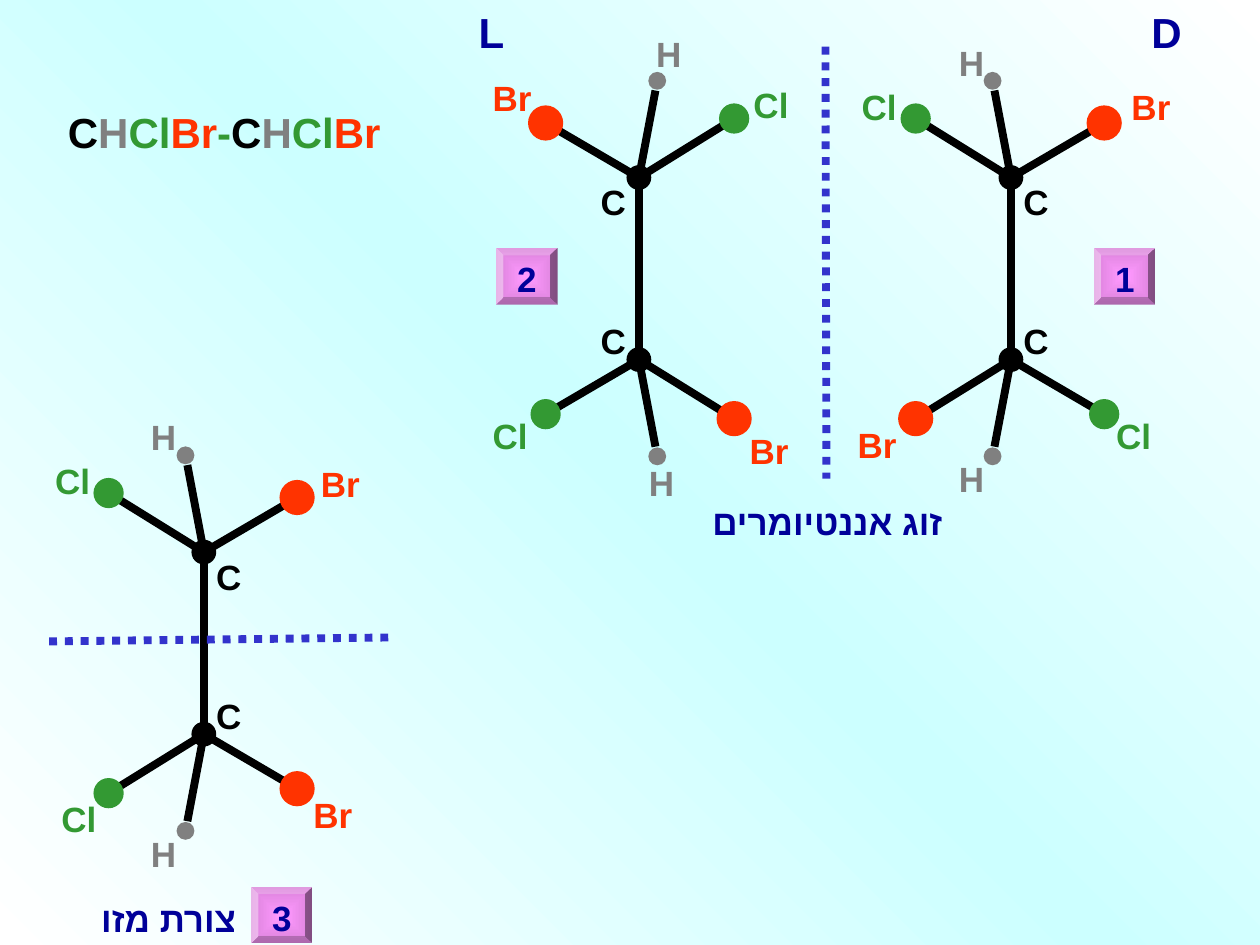
from dataclasses import dataclass, field

from lxml import etree
from pptx import Presentation
from pptx import util as u
from pptx.dml.color import RGBColor
from pptx.enum import dml, shapes, text
from pptx.oxml import ns, parse_xml


@dataclass(frozen=True)
class Theme:
    """Colours, type sizes and line width of the slide."""
    font: str = "Arial"
    heading: int = 24
    label: int = 20
    bond: float = 4.5
    navy: str = "000099"
    mirror: str = "3333CC"
    background: tuple = ((0, "FFFFFF"), (50, "CCFFFF"), (100, "FFFFFF"))
    button: tuple = ((0, "FF99FF"), (100, "D982D9"))
    atom: dict = field(default_factory=lambda: {
        "C": "000000", "H": "808080", "Cl": "339933", "Br": "FF3300"})


T = Theme()
DIAMETER = {"C": 0.5, "H": 0.36, "Cl": 0.61, "Br": 0.71}
HYDROGEN, FAR, NEAR = (0.37, 1.95), (1.92, 1.19), (1.88, 1.1)
CARBON_GAP = 3.67
FORMULA = ["C", "H", "Cl", "Br", "-", "C", "H", "Cl", "Br"]

# Carbon x, upper carbon y, hydrogen side, then left, hydrogen and right labels above and below
MOLECULES = [
    (12.88, 3.58, 1,
     [("Br", 9.68, 1.42), ("H", 12.98, 0.53), ("Cl", 14.94, 1.55)],
     [("Cl", 9.68, 8.23), ("H", 12.83, 9.17), ("Br", 14.86, 8.53)]),
    (20.38, 3.58, -1,
     [("Cl", 17.12, 1.6), ("H", 19.08, 0.71), ("Br", 22.56, 1.6)],
     [("Br", 17.04, 8.41), ("H", 19.08, 9.09), ("Cl", 22.25, 8.23)]),
    (4.11, 11.13, -1,
     [("Cl", 0.86, 9.14), ("H", 2.79, 8.26), ("Br", 6.22, 9.19)],
     [("Cl", 0.99, 15.95), ("H", 2.79, 16.66), ("Br", 6.07, 15.88)]),
]


def set_gradient(fill, owner, stops, shade):
    """Fill with the given colour stops and shading direction."""
    fill.gradient()
    grad = owner.find(".//" + ns.qn("a:gradFill"))
    marks = "".join(f'<a:gs pos="{pos * 1000}"><a:srgbClr val="{rgb}"/></a:gs>'
                    for pos, rgb in stops)
    new = parse_xml(f'<a:gradFill {ns.nsdecls("a")} rotWithShape="1">'
                    f"<a:gsLst>{marks}</a:gsLst>{shade}</a:gradFill>")
    grad.getparent().replace(grad, new)


def add_text(s, runs, x, y, w=1.65, h=1.09, size=T.label, rtl=False):
    """Add a bold text box from (text, colour) runs."""
    tf = s.shapes.add_textbox(u.Cm(x), u.Cm(y), u.Cm(w), u.Cm(h)).text_frame
    tf.word_wrap = True
    tf.auto_size = text.MSO_AUTO_SIZE.SHAPE_TO_FIT_TEXT
    p = tf.paragraphs[0]
    pPr = p._p.get_or_add_pPr()
    before = etree.SubElement(pPr, ns.qn("a:spcBef"))
    etree.SubElement(before, ns.qn("a:spcPct")).set("val", "50000")
    if rtl:
        p.alignment = text.PP_ALIGN.RIGHT
        pPr.set("rtl", "1")
    for words, rgb in runs:
        r = p.add_run()
        r.text = words
        r.font.name, r.font.size, r.font.bold = T.font, u.Pt(size), True
        r.font.color.rgb = RGBColor.from_string(rgb)
        if rtl:
            cs = etree.SubElement(r._r.get_or_add_rPr(), ns.qn("a:cs"))
            cs.set("typeface", T.font)


def add_line(s, x1, y1, x2, y2, rgb=T.atom["C"], dash=None):
    """Add a straight line without shadow."""
    sp = s.shapes.add_connector(shapes.MSO_CONNECTOR.STRAIGHT,
                                u.Cm(x1), u.Cm(y1), u.Cm(x2), u.Cm(y2))
    sp.line.color.rgb = RGBColor.from_string(rgb)
    sp.line.width = u.Pt(T.bond)
    if dash:
        sp.line.dash_style = dash
    etree.SubElement(sp._element.spPr, ns.qn("a:effectLst"))


def add_shape(s, kind, x, y, w, h):
    """Add a preset shape without outline or shadow."""
    sp = s.shapes.add_shape(kind, u.Cm(x), u.Cm(y), u.Cm(w), u.Cm(h))
    sp.shadow.inherit = False
    sp.line.fill.background()
    return sp


def add_atom(s, element, x, y):
    """Add an atom as a ball centred on a point."""
    d = DIAMETER[element]
    sp = add_shape(s, shapes.MSO_SHAPE.OVAL, x - d / 2, y - d / 2, d, d)
    sp.fill.solid()
    sp.fill.fore_color.rgb = RGBColor.from_string(T.atom[element])


def add_label(s, element, x, y):
    """Add an element symbol in its own colour."""
    add_text(s, [(element, T.atom[element])], x, y)


def add_half(s, x, y, out, side, labels):
    """Add one carbon with its substituents; out is -1 upward, 1 downward."""
    left, right = (FAR, NEAR) if side < 0 else (NEAR, FAR)
    offsets = [(-left[0], left[1]), (side * HYDROGEN[0], HYDROGEN[1]), right]
    add_line(s, x, y, x, y - out * 1.95)
    for dx, dy in offsets:
        add_line(s, x, y, x + 0.9 * dx, y + 0.9 * out * dy)
    add_atom(s, "C", x, y)
    add_label(s, "C", x if side < 0 else x - 1.02, y - (0.06 if out < 0 else 0.93))
    for (dx, dy), (element, lx, ly) in zip(offsets, labels):
        add_atom(s, element, x + dx, y + out * dy)
        add_label(s, element, lx, ly)


def add_button(s, number, x, y):
    """Add a numbered bevel button."""
    sp = add_shape(s, shapes.MSO_SHAPE.BEVEL, x, y, 1.24, 1.14)
    sp.adjustments[0] = 0.125
    set_gradient(sp.fill, sp._element, T.button,
                 '<a:path path="rect"><a:fillToRect l="50000" t="50000" '
                 'r="50000" b="50000"/></a:path>')
    add_text(s, [(number, T.navy)], x, y + 0.06, w=1.07, rtl=True)


def main():
    """Build the slide and save it."""
    prs = Presentation()
    prs.slide_width, prs.slide_height = u.Cm(25.4), u.Cm(19.05)
    s = prs.slides.add_slide(prs.slide_layouts[6])
    set_gradient(s.background.fill, s._element, T.background,
                 '<a:lin ang="18900000" scaled="1"/>')

    formula = [(part, T.atom.get(part, T.atom["Cl"])) for part in FORMULA]
    add_text(s, formula, 1.12, 2.03, w=7.54, h=1.27, size=T.heading)
    for name, x in (("D", 22.96), ("L", 9.4)):
        add_text(s, [(name, T.navy)], x, 0, w=1.8, h=1.27, size=T.heading)

    for x, y, side, upper, lower in MOLECULES:
        add_half(s, x, y + CARBON_GAP, 1, side, lower)
        add_half(s, x, y, -1, side, upper)
    for ends in ((16.64, 0.94, 16.66, 9.65), (0.99, 12.93, 7.9, 12.85)):
        add_line(s, *ends, rgb=T.mirror, dash=dml.MSO_LINE.ROUND_DOT)

    add_text(s, [("זוג אננטיומרים", T.navy)], 12.98, 9.96, w=6.27, rtl=True)
    add_text(s, [("צורת מזו", T.navy)], 0.97, 17.96, w=4.04, rtl=True)
    for number, x, y in (("2", 10, 5), ("1", 22.05, 5), ("3", 5.06, 17.88)):
        add_button(s, number, x, y)
    prs.save("out.pptx")


if __name__ == "__main__":
    main()
